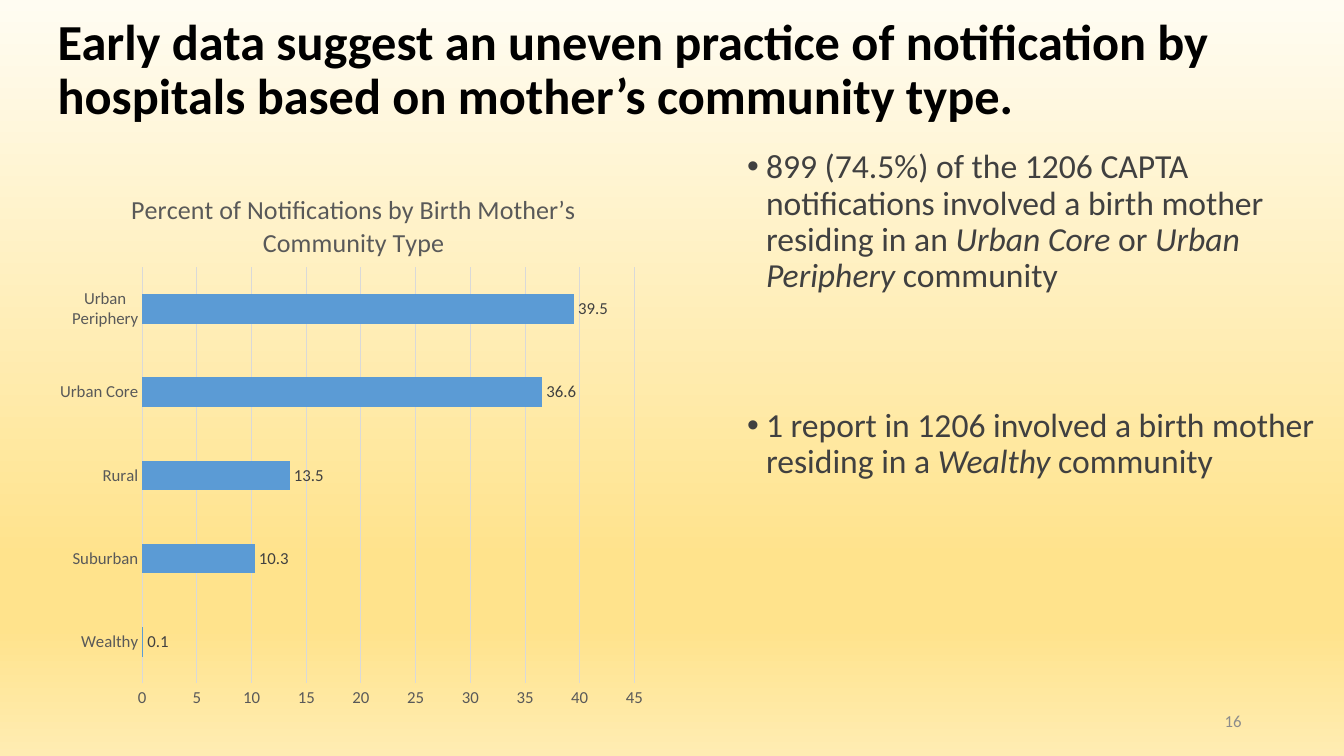
from lxml.etree import SubElement
from copy import deepcopy
from pptx import Presentation
from pptx.chart.data import CategoryChartData
from pptx.dml.color import RGBColor
from pptx.enum.chart import XL_CHART_TYPE as ChartType
from pptx.enum.chart import XL_LABEL_POSITION as LabelPosition
from pptx.enum.chart import XL_TICK_MARK as TickMark
from pptx.enum.text import MSO_ANCHOR as Anchor
from pptx.enum.text import MSO_AUTO_SIZE as AutoSize
from pptx.enum.text import PP_ALIGN as Align
from pptx.oxml.ns import qn
from pptx.util import Pt

INK, BODY, LABEL, MUTED = "000000", "404040", "595959", "8C8C8C"
GRID, BAR = "D9D9D9", "5B9BD5"
BACKGROUND = [(0, "FFFCF2"), (0.74, "FFE38C"), (0.83, "FFE38C"), (1, "FFECB2")]
NOTIFICATIONS = {
    "Wealthy": 0.1,
    "Suburban": 10.3,
    "Rural": 13.5,
    "Urban Core": 36.6,
    "Urban Periphery": 39.5,
}
# Each finding is a list of (text, italic) runs.
FINDINGS = [
    [
        ("899 (74.5%) of the 1206 CAPTA notifications involved a birth mother residing in an ", False),
        ("Urban Core ", True),
        ("or ", False),
        ("Urban Periphery", True),
        (" community", False),
    ],
    [
        ("1 report in 1206 involved a birth mother residing in a ", False),
        ("Wealthy", True),
        (" community", False),
    ],
]


def rgb(code):
    return RGBColor.from_string(code)


def apply(target, **values):
    for name, value in values.items():
        setattr(target, name, value)


def style_font(font, size, color, bold=False):
    apply(font, name="Calibri", size=Pt(size), bold=bold)
    font.color.rgb = rgb(color)


def place(shape, box):
    for side, length in zip(("left", "top", "width", "height"), box):
        setattr(shape, side, Pt(length))


def paint_background(slide):
    fill = slide.background.fill
    fill.gradient()
    fill.gradient_angle = 270
    stop_list = slide.element.find(".//" + qn("a:gsLst"))
    while len(stop_list) < len(BACKGROUND):
        stop_list.append(deepcopy(stop_list[0]))
    for stop, (position, color) in zip(fill.gradient_stops, BACKGROUND):
        stop.position = position
        stop.color.rgb = rgb(color)


def write_title(slide, box):
    title = slide.shapes.title
    place(title, box)
    frame = title.text_frame
    apply(frame, word_wrap=True, auto_size=AutoSize.NONE, vertical_anchor=Anchor.MIDDLE)
    heading = frame.paragraphs[0]
    heading.text = "Early data suggest an uneven practice of notification by hospitals based on mother’s community type."
    apply(heading, alignment=Align.LEFT, line_spacing=0.9)
    style_font(heading.runs[0].font, 36, INK, bold=True)


def set_layout(parent, **fractions):
    """Fix a chart part at fractions of the chart area."""
    for old in parent.findall(qn("c:layout")):
        parent.remove(old)
    layout = parent.makeelement(qn("c:layout"))
    manual = SubElement(layout, qn("c:manualLayout"))
    settings = {"xMode": "edge", "yMode": "edge", **fractions}
    if "w" in fractions:
        settings = {"layoutTarget": "inner", **settings}
    for name, value in settings.items():
        SubElement(manual, qn("c:" + name)).set("val", str(value))
    text = parent.find(qn("c:tx"))
    parent.insert(0 if text is None else 1, layout)


def draw_chart(slide, box):
    data = CategoryChartData(number_format="General")
    data.categories = list(NOTIFICATIONS)
    data.add_series("Series 1", NOTIFICATIONS.values())
    frame = slide.shapes.add_chart(ChartType.BAR_CLUSTERED, *map(Pt, box), data)
    chart = frame.chart
    apply(chart, has_legend=False, has_title=True)
    style_font(chart.font, 10, INK)

    heading = chart.chart_title.text_frame.paragraphs[0]
    heading.text = "Percent of Notifications by Birth Mother’s Community Type"
    style_font(heading.runs[0].font, 18.6, LABEL)
    chart.chart_title.include_in_layout = False
    set_layout(chart.element.find(".//" + qn("c:title")), x=0.13, y=0.04)
    set_layout(chart.element.find(".//" + qn("c:plotArea")), x=0.156, y=0.185, w=0.811, h=0.75)

    types, percents = chart.category_axis, chart.value_axis
    for axis in (types, percents):
        apply(axis, major_tick_mark=TickMark.NONE, minor_tick_mark=TickMark.NONE)
        style_font(axis.tick_labels.font, 12, LABEL)
    apply(percents, minimum_scale=0, maximum_scale=45, major_unit=5, has_major_gridlines=True)
    percents.format.line.fill.background()
    for line in (types.format.line, percents.major_gridlines.format.line):
        line.width = Pt(0.75)
        line.color.rgb = rgb(GRID)

    plot = chart.plots[0]
    apply(plot, gap_width=182, vary_by_categories=False, has_data_labels=True)
    apply(plot.data_labels, show_value=True, position=LabelPosition.OUTSIDE_END)
    style_font(plot.data_labels.font, 12, BODY)
    bars = plot.series[0].format.fill
    bars.solid()
    bars.fore_color.rgb = rgb(BAR)


def add_bullet(paragraph, indent):
    properties = paragraph._p.get_or_add_pPr()
    properties.set("marL", str(Pt(indent)))
    properties.set("indent", str(-Pt(indent)))
    SubElement(properties, qn("a:buFont")).set("typeface", "Arial")
    SubElement(properties, qn("a:buChar")).set("char", "•")


def write_findings(slide, box):
    body = slide.placeholders[1]
    place(body, box)
    frame = body.text_frame
    apply(frame, word_wrap=True, auto_size=AutoSize.NONE, vertical_anchor=Anchor.TOP)
    for index, finding in enumerate(FINDINGS):
        paragraph = frame.add_paragraph() if index else frame.paragraphs[0]
        add_bullet(paragraph, 13.5)
        apply(paragraph, line_spacing=0.9, space_before=Pt(81 if index else 0))
        for text, italic in finding:
            run = paragraph.add_run()
            run.text = text
            style_font(run.font, 24, BODY)
            run.font.italic = italic


def write_page_number(slide, box):
    frame = slide.shapes.add_textbox(*map(Pt, box)).text_frame
    apply(frame, word_wrap=True, vertical_anchor=Anchor.MIDDLE)
    number = frame.paragraphs[0]
    number.text = "16"
    number.alignment = Align.RIGHT
    style_font(number.runs[0].font, 12, MUTED)


def main():
    deck = Presentation()
    apply(deck, slide_width=Pt(960), slide_height=Pt(540))
    slide = deck.slides.add_slide(deck.slide_layouts[1])
    paint_background(slide)
    write_title(slide, (34, 34, 903, 34))
    draw_chart(slide, (34, 117.5, 433.5, 396.5))
    write_page_number(slide, (678, 500.5, 216, 28.8))
    write_findings(slide, (526.5, 103.5, 433.5, 408))
    deck.save("out.pptx")


if __name__ == "__main__":
    main()
